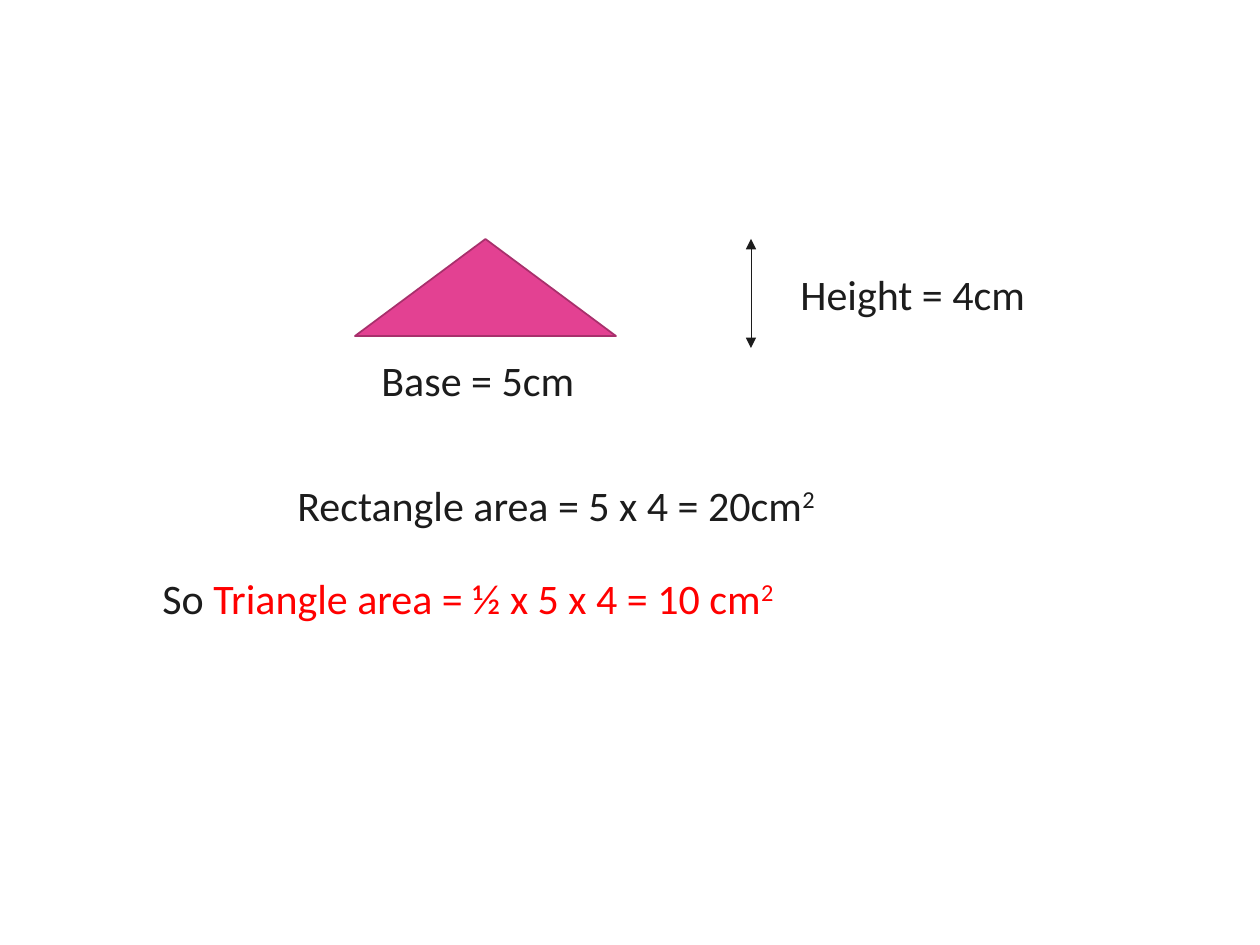
from dataclasses import dataclass

from lxml.etree import SubElement
from pptx import Presentation
from pptx.dml.color import RGBColor
from pptx.enum.shapes import MSO_CONNECTOR, MSO_SHAPE
from pptx.oxml.ns import qn
from pptx.util import Pt

EMU_PER_PX = 914400 / 126
LINE_HEIGHT = 63


@dataclass(frozen=True)
class Theme:
    ink: str = "1C1C1C"
    answer: str = "FF0000"
    triangle: str = "E34192"
    triangle_edge: str = "A8306C"
    font: str = "Calibri"
    text_size: int = 24
    edge_width: float = 1
    arrow_width: float = 0.5


THEME = Theme()


def px(*lengths):
    """Turn pixel lengths into EMU."""
    return [round(length * EMU_PER_PX) for length in lengths]


def add_span(para, text, *, color=THEME.ink, superscript=False):
    span = para.add_run()
    span.text = text
    span.font.name = THEME.font
    span.font.size = Pt(THEME.text_size)
    span.font.color.rgb = RGBColor.from_string(color)
    if superscript:
        span.font._element.set("baseline", "30000")


def add_text_line(page, left, top, width):
    """Add a one-line text box and return its empty paragraph."""
    box = page.shapes.add_textbox(*px(left, top, width, LINE_HEIGHT))
    box.text_frame.word_wrap = True
    return box.text_frame.paragraphs[0]


def add_triangle(page, left, top, width, height):
    triangle = page.shapes.add_shape(
        MSO_SHAPE.ISOSCELES_TRIANGLE, *px(left, top, width, height))
    triangle.shadow.inherit = False
    triangle.fill.solid()
    triangle.fill.fore_color.rgb = RGBColor.from_string(THEME.triangle)
    triangle.line.color.rgb = RGBColor.from_string(THEME.triangle_edge)
    triangle.line.width = Pt(THEME.edge_width)


def add_height_arrow(page, x, top, height):
    """Add a vertical arrow with a head at each end."""
    arrow = page.shapes.add_connector(
        MSO_CONNECTOR.STRAIGHT, *px(x, top, x, top + height))
    arrow.line.color.rgb = RGBColor.from_string(THEME.ink)
    arrow.line.width = Pt(THEME.arrow_width)
    outline = arrow.line._get_or_add_ln()
    for end in ("a:headEnd", "a:tailEnd"):
        SubElement(outline, qn(end), type="triangle")
    SubElement(arrow._element.spPr, qn("a:effectLst"))


def add_diagram(page, left, top):
    """Add the triangle with its base and height labels."""
    base_width = 261
    arrow_height = 109
    add_span(add_text_line(page, left + 433, top + 23, 307), "Height = 4cm")
    add_height_arrow(page, left + 396, top, arrow_height)
    add_span(add_text_line(page, left + 14, top + arrow_height, base_width),
             "Base = 5cm")
    add_triangle(page, left, top, base_width, 97)


def add_working(page, left, top):
    """Add the rectangle area and, below it, the triangle area."""
    rectangle = add_text_line(page, left + 135, top, 625)
    add_span(rectangle, "Rectangle area = 5 x 4 = 20cm")
    add_span(rectangle, "2", superscript=True)

    triangle = add_text_line(page, left, top + 93, 985)
    add_span(triangle, "So ")
    add_span(triangle, "Triangle area = ½ x 5 x 4 = 10 cm", color=THEME.answer)
    add_span(triangle, "2", color=THEME.answer, superscript=True)


def main():
    deck = Presentation()
    deck.slide_width, deck.slide_height = px(1260, 945)
    page = deck.slides.add_slide(deck.slide_layouts[6])
    add_diagram(page, 355, 239)
    add_working(page, 150, 473)
    deck.save("out.pptx")


if __name__ == "__main__":
    main()
